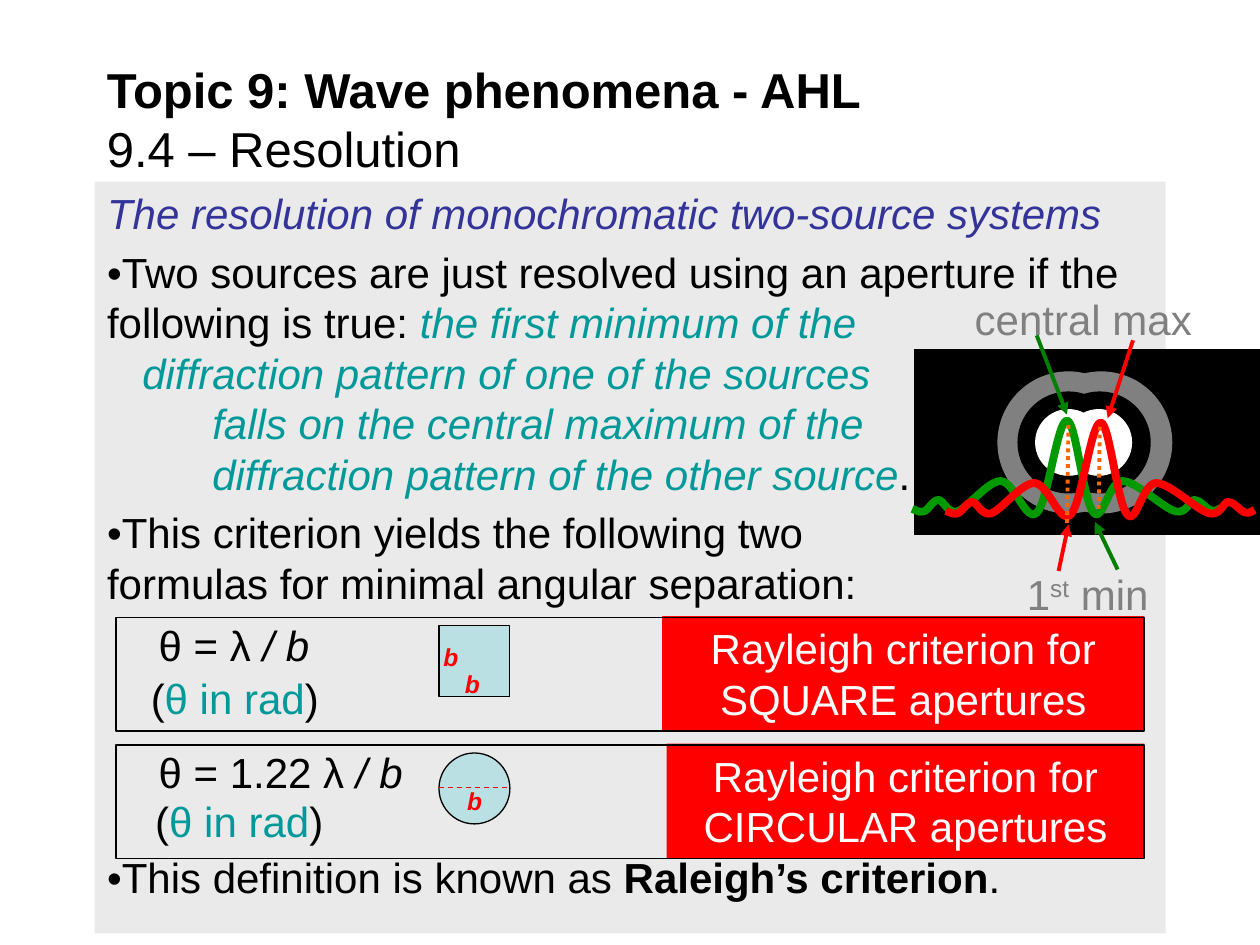
"""Build the slide on resolution and the Rayleigh criterion."""
import lxml.etree
import pptx
import pptx.dml.color
import pptx.enum.dml
import pptx.enum.shapes
import pptx.enum.text
import pptx.oxml
import pptx.oxml.ns
import pptx.util

Cm = pptx.util.Cm
Pt = pptx.util.Pt
RGBColor = pptx.dml.color.RGBColor
SHAPE = pptx.enum.shapes.MSO_SHAPE
DASH = pptx.enum.dml.MSO_LINE
ALIGN = pptx.enum.text.PP_ALIGN
qn = pptx.oxml.ns.qn

BLACK = RGBColor(0x00, 0x00, 0x00)
WHITE = RGBColor(0xFF, 0xFF, 0xFF)
GREY = RGBColor(0x80, 0x80, 0x80)
PANEL = RGBColor(0xEA, 0xEA, 0xEA)
NAVY = RGBColor(0x33, 0x33, 0x99)
TEAL = RGBColor(0x00, 0x99, 0x99)
RED = RGBColor(0xFF, 0x00, 0x00)
GREEN = RGBColor(0x00, 0x80, 0x00)
CURVE_GREEN = RGBColor(0x00, 0x99, 0x00)
ORANGE = RGBColor(0xFF, 0x66, 0x00)
AQUA = RGBColor(0xBB, 0xE0, 0xE3)

CURVE_START = (18.39, 10.26)
CURVE_SEGMENTS = [
    ((18.47, 10.29), (18.54, 10.34), (18.62, 10.31)),
    ((18.72, 10.29), (18.8, 10.08), (18.92, 10.08)),
    ((19.02, 10.08), (19.1, 10.36), (19.3, 10.31)),
    ((19.51, 10.24), (19.91, 9.7), (20.17, 9.7)),
    ((20.45, 9.7), (20.68, 10.54), (20.9, 10.34)),
    ((21.13, 10.13), (21.31, 8.48), (21.51, 8.48)),
    ((21.69, 8.48), (21.84, 10.13), (22.05, 10.34)),
    ((22.23, 10.54), (22.35, 9.7), (22.63, 9.7)),
    ((22.91, 9.7), (23.44, 10.24), (23.7, 10.31)),
    ((23.93, 10.36), (23.98, 10.08), (24.08, 10.08)),
    ((24.21, 10.08), (24.31, 10.26), (24.41, 10.29)),
    ((24.49, 10.31), (24.56, 10.29), (24.61, 10.24)),
]


def add_span(para, text, color=BLACK, size=24, bold=False, italic=False, raised=False):
    """Add formatted text to a paragraph, breaking lines at newlines."""
    for index, piece in enumerate(text.split("\n")):
        if index:
            para.add_line_break()
        span = para.add_run()
        span.text = piece
        font = span.font
        font.name, font.size, font.bold, font.italic = "Arial", Pt(size), bold, italic
        font.color.rgb = color
        if raised:
            span._r.get_or_add_rPr().set("baseline", "30000")


def add_box(shapes, kind, left, top, width, height, fill=None, line=None, weight=0.75):
    """Add a preset shape without shadow."""
    box = shapes.add_shape(kind, Cm(left), Cm(top), Cm(width), Cm(height))
    box.shadow.inherit = False
    if fill is None:
        box.fill.background()
    else:
        box.fill.solid()
        box.fill.fore_color.rgb = fill
    if line is None:
        box.line.fill.background()
    else:
        box.line.color.rgb = line
        box.line.width = Pt(weight)
    return box


def add_text(shapes, left, top, width, height, spans, wrap=True):
    """Add a text box holding one paragraph of runs."""
    box = shapes.add_textbox(Cm(left), Cm(top), Cm(width), Cm(height))
    box.text_frame.word_wrap = wrap
    for text, style in spans:
        add_span(box.text_frame.paragraphs[0], text, **style)


def add_line(shapes, start, end, color, weight=2.25, dash=None, arrow=False):
    """Add a straight line, optionally dashed or with an arrowhead."""
    x1, y1, x2, y2 = (Cm(value) for value in start + end)
    line = shapes.add_connector(pptx.enum.shapes.MSO_CONNECTOR.STRAIGHT, x1, y1, x2, y2)
    line.line.color.rgb = color
    line.line.width = Pt(weight)
    if dash is not None:
        line.line.dash_style = dash
    if arrow:
        tail = pptx.oxml.parse_xml(
            f'<a:tailEnd {pptx.oxml.ns.nsdecls("a")} type="triangle"/>')
        line.line._get_or_add_ln().append(tail)
    line._element.spPr.append(
        pptx.oxml.parse_xml(f'<a:effectLst {pptx.oxml.ns.nsdecls("a")}/>'))


def add_curve(shapes, color, dx=0.0, dy=0.0):
    """Draw the diffraction intensity curve with Bezier segments, shifted by dx and dy."""
    builder = shapes.build_freeform(Cm(CURVE_START[0] + dx), Cm(CURVE_START[1] + dy))
    ends = [(Cm(x + dx), Cm(y + dy)) for _, _, (x, y) in CURVE_SEGMENTS]
    builder.add_line_segments(ends, close=False)
    curve = builder.convert_to_shape()
    straight = list(curve._element.iter(qn("a:lnTo")))
    for piece, segment in zip(straight, CURVE_SEGMENTS):
        bezier = lxml.etree.Element(qn("a:cubicBezTo"))
        for x, y in segment:
            point = lxml.etree.SubElement(bezier, qn("a:pt"))
            point.set("x", str(Cm(x + dx) - curve.left))
            point.set("y", str(Cm(y + dy) - curve.top))
        piece.getparent().replace(piece, bezier)
    curve.shadow.inherit = False
    curve.fill.background()
    curve.line.color.rgb = color
    curve.line.width = Pt(4.5)


def add_title(page):
    """Place and fill the title placeholder."""
    title = page.shapes.title
    title.left, title.top, title.width, title.height = Cm(1.9), Cm(1.14), Cm(21.6), Cm(2.5)
    frame = title.text_frame
    frame.auto_size = pptx.enum.text.MSO_AUTO_SIZE.NONE
    frame.vertical_anchor = pptx.enum.text.MSO_ANCHOR.MIDDLE
    para = frame.paragraphs[0]
    para.alignment = ALIGN.LEFT
    add_span(para, "Topic 9: Wave phenomena - AHL\n", size=28, bold=True)
    add_span(para, "9.4 – Resolution", size=28)


def add_body(page):
    """Add the grey panel with the running text."""
    teal = {"color": TEAL, "italic": True}
    content = [
        (0, 0, [("The resolution of monochromatic two-source systems",
                 {"color": NAVY, "italic": True})]),
        (4.8, 0, [("•Two sources are just resolved using an aperture if the "
                   "following is true: ", {}), ("the first minimum of the", teal)]),
        (0, 0.71, [("diffraction pattern of one of the sources", teal)]),
        (0, 2.12, [("falls on the central maximum of the\n"
                    "diffraction pattern of the other source", teal), (".", {})]),
        (4.8, 0, [("•This criterion yields the following two\n"
                   "formulas for minimal angular separation:", {})]),
        (139.4, 0, [("•This definition is known as ", {}),
                    ("Raleigh’s criterion", {"bold": True}), (".", {})]),
    ]
    frame = add_box(page.shapes, SHAPE.RECTANGLE, 1.91, 3.66, 21.59, 15.16, PANEL).text_frame
    frame.word_wrap = True
    frame.vertical_anchor = pptx.enum.text.MSO_ANCHOR.TOP
    for index, (before, indent, spans) in enumerate(content):
        para = frame.add_paragraph() if index else frame.paragraphs[0]
        para.alignment = ALIGN.LEFT
        para.space_before = Pt(before)
        para._p.get_or_add_pPr().set("marL", str(Cm(indent)))
        for text, style in spans:
            add_span(para, text, **style)


def add_diffraction(page):
    """Draw the two overlapping diffraction patterns with their labels."""
    rings = page.shapes.add_group_shape().shapes
    add_box(rings, SHAPE.RECTANGLE, 18.44, 7.04, 6.96, 3.74, BLACK, BLACK)
    for size, color, right in ((2.84, GREY, 22.2), (2.03, BLACK, 22.17), (1.32, WHITE, 22.15)):
        for center in (21.54, right):
            add_box(rings, SHAPE.OVAL, center - size / 2, 8.92 - size / 2,
                    size, size, color, color)
    add_curve(page.shapes, CURVE_GREEN)
    add_curve(page.shapes, RED, 0.68, 0.04)
    grey = {"color": GREY}
    add_text(page.shapes, 19.4, 5.79, 5.38, 1.27, [("central max", grey)])
    add_text(page.shapes, 20.45, 11.33, 3.76, 1.3,
             [("1", grey), ("st", {"color": GREY, "raised": True}), (" min", grey)])
    for start, end, color in (((20.9, 6.76), (21.51, 8.36), GREEN),
                              ((21.34, 11.51), (21.54, 10.57), RED),
                              ((22.53, 11.48), (22.07, 10.52), GREEN),
                              ((22.84, 6.86), (22.33, 8.43), RED)):
        add_line(page.shapes, start, end, color, arrow=True)


def add_criterion(page, top, label_left, name, formula, rad_at, aperture, letters):
    """Add one framed formula row and return its shapes."""
    shapes = page.shapes.add_group_shape().shapes
    label = add_box(shapes, SHAPE.RECTANGLE, label_left, top, 23.07 - label_left, 2.31, RED)
    label.text_frame.word_wrap = True
    para = label.text_frame.paragraphs[0]
    para.alignment = ALIGN.CENTER
    add_span(para, f"Rayleigh criterion for {name} apertures", WHITE)
    add_box(shapes, SHAPE.RECTANGLE, 2.34, top + 0.03, 20.73, 2.29, None, BLACK, 1)
    add_text(shapes, 2.95, top - 0.06, 5.92, 1.3, [(formula, {}), ("/ b", {"italic": True})])
    add_text(shapes, *rad_at, 5.92, 1.3, [("(", {}), ("θ in rad", {"color": TEAL}), (")", {})])
    add_box(shapes, aperture, 8.85, top + 0.19, 1.43, 1.43, AQUA, BLACK)
    style = {"color": RED, "size": 14, "bold": True, "italic": True}
    for left, letter_top in letters:
        add_text(shapes, left, letter_top, 0.81, 0.84, [("b", style)], wrap=False)
    return shapes


def main():
    """Assemble the slide and save it."""
    deck = pptx.Presentation()
    deck.slide_width, deck.slide_height = Cm(25.4), Cm(19.05)
    page = deck.slides.add_slide(deck.slide_layouts[5])
    add_title(page)
    add_body(page)
    add_diffraction(page)
    add_criterion(page, 12.42, 13.35, "SQUARE", "θ = λ ", (2.79, 13.44),
                  SHAPE.RECTANGLE, [(9.12, 13.36), (8.69, 12.82)])
    circular = add_criterion(page, 14.99, 13.44, "CIRCULAR", "θ = 1.22 λ ", (2.88, 15.92),
                             SHAPE.OVAL, [(9.17, 15.72)])
    add_line(circular, (8.84, 15.88), (10.29, 15.88), RED, 0.75, DASH.DASH)
    for start, end in (((21.51, 10.54), (21.54, 8.51)), ((22.15, 10.26), (22.17, 8.59))):
        add_line(page.shapes, start, end, ORANGE, dash=DASH.ROUND_DOT)
    deck.save("out.pptx")


if __name__ == "__main__":
    main()
